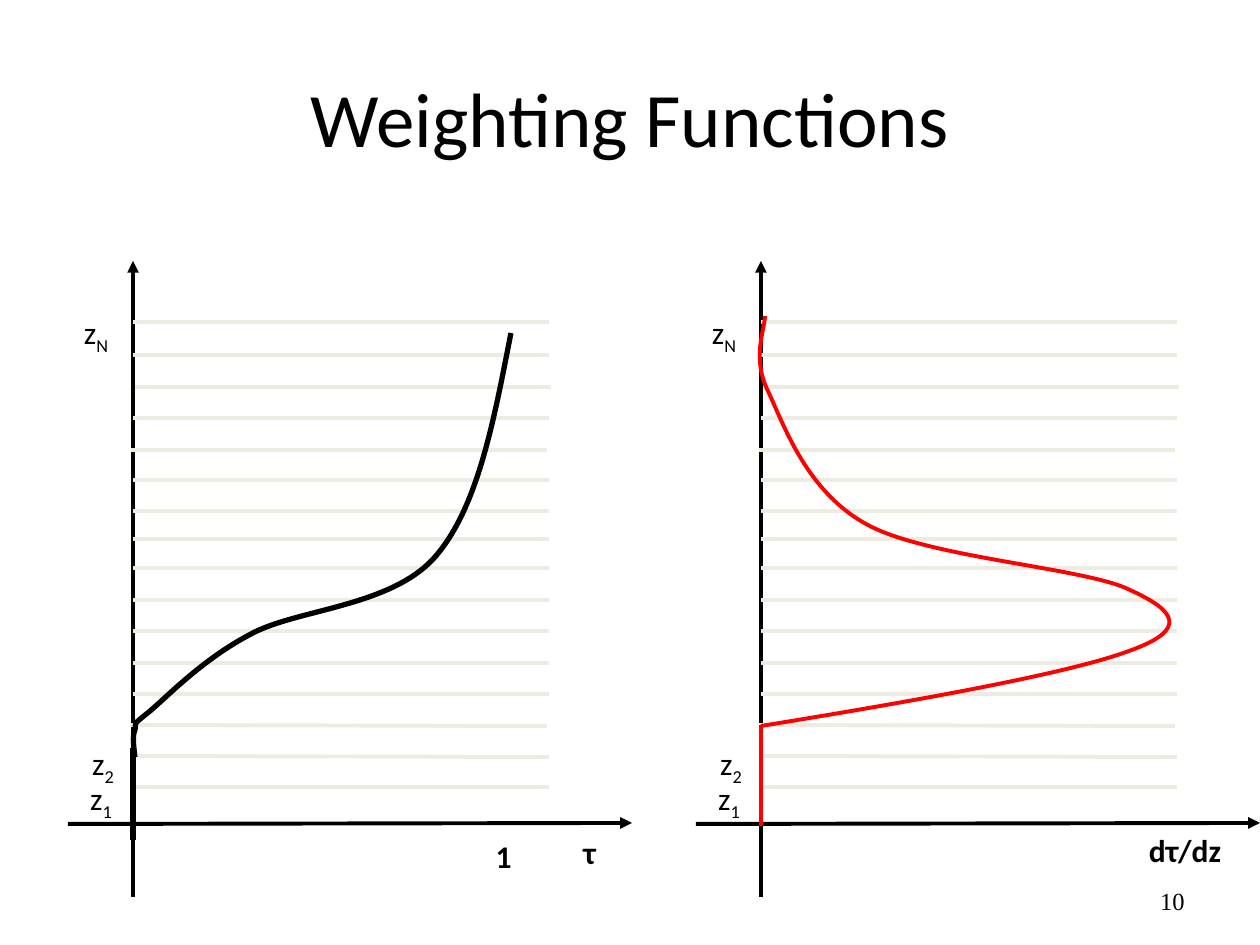
from lxml.etree import SubElement
from pptx import Presentation
from pptx.dml.color import RGBColor
from pptx.enum.shapes import MSO_CONNECTOR
from pptx.enum.text import MSO_ANCHOR, MSO_AUTO_SIZE, PP_ALIGN
from pptx.oxml.ns import qn
from pptx.util import Emu, Pt

PX = 914400 / 126
COLORS = {"ink": "000000", "grid": "EEECE1", "weighting": "FF0000"}
TITLE = "Weighting Functions"
PAGE_NUMBER = "10"

# Left edges of the two plots' vertical axes
PANEL_AXES = [133, 761]

# Height labels: base, subscript, box offset from the axis, top, width
HEIGHT_LABELS = [("z", "1", -61, 780, 58), ("z", "2", -59, 745, 58), ("z", "N", -69, 314, 64)]

# Axis captions of each plot: text, left, top, width
AXIS_CAPTIONS = [
    [("τ", 568, 837, 43), ("1", 481, 841, 45)],
    [("dτ/dz", 1125, 835, 120)],
]

# Level lines: y, shift right, drop at the right end
LEVELS = [
    (787, 0, 0), (756, 0, 1), (725, -2, 1), (694, 0, 0),
    (663, 0, 0), (631, 0, 0), (600, 0, 0), (568, 0, 0),
    (539, 0, 0), (511, 0, 0), (480, 0, 0), (450, -2, 0),
    (418, 0, 0), (387, 2, 0), (355, 0, 0), (322, 0, 0),
]
LEVEL_WIDTH = 416

# Cubic curves: a start, then two control points and an end for each piece
WEIGHTING_CURVE = [
    (761, 726), (915, 701), (1067, 674), (1129, 651),
    (1191, 629), (1174, 610), (1130, 590),
    (1087, 568), (929, 558), (868, 525),
    (808, 493), (785, 428), (769, 393),
    (751, 358), (765, 330), (765, 316),
]
TRANSMITTANCE_CURVE = [
    (135, 757), (134, 747), (132, 737), (135, 730),
    (137, 722), (130, 727), (149, 712),
    (168, 696), (203, 659), (251, 634),
    (297, 609), (391, 607), (435, 557),
    (478, 508), (494, 420), (511, 333),
]

presentation = Presentation()
presentation.slide_width = Emu(round(1260 * PX))
presentation.slide_height = Emu(round(945 * PX))
slide = presentation.slides.add_slide(presentation.slide_layouts[6])


def emu(*lengths):
    return [Emu(round(length * PX)) for length in lengths]


def set_line(shape, color, width):
    shape.line.color.rgb = RGBColor.from_string(COLORS[color])
    shape.line.width = Pt(width)


def add_line(start, end, color="ink", width=2.25, arrow=False):
    line = slide.shapes.add_connector(MSO_CONNECTOR.STRAIGHT, *emu(*start, *end))
    set_line(line, color, width)
    properties = line._element.spPr
    if arrow:
        SubElement(properties.find(qn("a:ln")), qn("a:tailEnd"), type="triangle")
    SubElement(properties, qn("a:effectLst"))


def add_text(box, parts, size, font="Calibri", align=PP_ALIGN.CENTER, bold=False, label=False):
    frame = slide.shapes.add_textbox(*emu(*box)).text_frame
    frame.word_wrap = not label
    paragraph = frame.paragraphs[0]
    paragraph.alignment = align
    if label:
        frame.auto_size = MSO_AUTO_SIZE.SHAPE_TO_FIT_TEXT
        paragraph.line_spacing = 0.7
    else:
        frame.vertical_anchor = MSO_ANCHOR.MIDDLE
    for index, part in enumerate(parts):
        run = paragraph.add_run()
        run.text = part
        run.font.name, run.font.size, run.font.bold = font, Pt(size), bold
        run.font.color.rgb = RGBColor.from_string(COLORS["ink"])
        if index:  # every part after the first is a subscript
            run._r.get_or_add_rPr().set("baseline", "-25000")


def add_curve(knots, color, width):
    start, *rest = [emu(*knot) for knot in knots]
    builder = slide.shapes.build_freeform(*start)
    builder.add_line_segments(rest, close=False)
    curve = builder.convert_to_shape()
    curve.shadow.inherit = False
    curve.fill.background()
    set_line(curve, color, width)
    # Turn each three line segments into one cubic piece
    outline = next(curve._element.iter(qn("a:path")))
    segments = outline.findall(qn("a:lnTo"))
    for first in range(0, len(segments), 3):
        cubic = SubElement(outline, qn("a:cubicBezTo"))
        for segment in segments[first:first + 3]:
            cubic.append(segment[0])
            outline.remove(segment)


add_text((63, 38, 1134, 157), [TITLE], 44)

# Axes, labels and level lines of both plots
for axis_x, captions in zip(PANEL_AXES, AXIS_CAPTIONS):
    add_line((axis_x, 897), (axis_x, 261), arrow=True)
    add_line((axis_x - 65, 824), (axis_x + 499, 823), arrow=True)
    for caption, left, top, width in captions:
        add_text((left, top, width, 48), [caption], 18, bold=True, label=True)
    for base, subscript, offset, top, width in HEIGHT_LABELS:
        add_text((axis_x + offset, top, width, 48), [base, subscript], 18, label=True)
    for y, shift, drop in LEVELS:
        left = axis_x + shift
        add_line((left, y), (left + LEVEL_WIDTH, y + drop), "grid")

# Curves and their straight lower parts
add_curve(WEIGHTING_CURVE, "weighting", 2.25)
add_line((PANEL_AXES[0], 840), (PANEL_AXES[0], 748), width=3)
add_curve(TRANSMITTANCE_CURVE, "ink", 3)
add_line((PANEL_AXES[1], 725), (PANEL_AXES[1], 826), "weighting", 2)

add_text((903, 876, 294, 50), [PAGE_NUMBER], 14, "Times New Roman", PP_ALIGN.RIGHT)

presentation.save("out.pptx")
